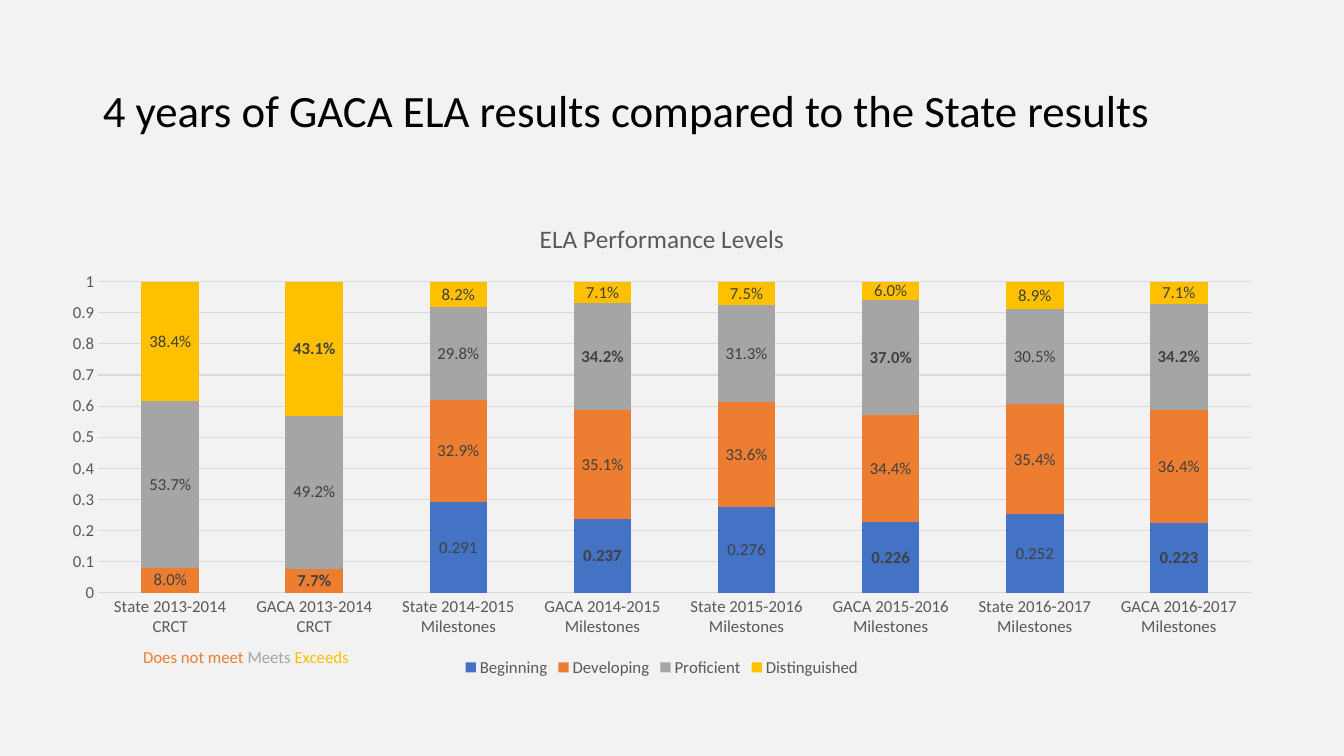
from pptx import Presentation
from pptx.chart.data import CategoryChartData
from pptx.dml.color import RGBColor
from pptx.enum.chart import XL_CHART_TYPE as Chart, XL_LEGEND_POSITION as Legend
from pptx.enum.chart import XL_TICK_MARK as Tick
from pptx.enum.text import MSO_ANCHOR as Anchor, PP_ALIGN as Align
from pptx.util import Inches, Pt

COLORS = {
    "background": "F2F2F2", "title": "000000", "axis": "595959",
    "grid": "D9D9D9", "label": "404040", "Beginning": "4472C4",
    "Developing": "ED7D31", "Proficient": "A5A5A5", "Distinguished": "FFC000",
}
TESTS = [("2013-2014", "CRCT"), ("2014-2015", "Milestones"),
         ("2015-2016", "Milestones"), ("2016-2017", "Milestones")]
LEVELS = {
    "Beginning": (None, None, 0.291, 0.237, 0.276, 0.226, 0.252, 0.223),
    "Developing": (0.08, 0.077, 0.329, 0.351, 0.336, 0.344, 0.354, 0.364),
    "Proficient": (0.537, 0.492, 0.298, 0.342, 0.313, 0.37, 0.305, 0.342),
    "Distinguished": (0.384, 0.431, 0.082, 0.071, 0.075, 0.06, 0.089, 0.071),
}
BOLD_POINTS = {"Beginning": (3, 5, 7), "Developing": (1,),
               "Proficient": (3, 5, 7), "Distinguished": (1,)}
CRCT_KEY = [("Does not meet ", "Developing"), ("Meets ", "Proficient"),
            ("Exceeds", "Distinguished")]


def rgb(name):
    """Return the named colour."""
    return RGBColor.from_string(COLORS[name])


def set_font(font, color, size=12, bold=False):
    """Format a font from a dict of values."""
    values = {"name": "Calibri", "size": Pt(size), "bold": bold}
    for key, value in values.items():
        setattr(font, key, value)
    font.color.rgb = rgb(color)


def set_line(line):
    """Give a chart line the thin grid style."""
    line.color.rgb = rgb("grid")
    line.width = Pt(0.75)


def add_title(s, box):
    """Fill the title placeholder and fit it to the box."""
    sp = s.shapes.title
    for key, value in zip(("left", "top", "width", "height"), box):
        setattr(sp, key, Inches(value))
    tf = sp.text_frame
    tf.vertical_anchor = Anchor.MIDDLE
    p = tf.paragraphs[0]
    p.alignment = Align.LEFT
    p.line_spacing = 0.9
    r = p.add_run()
    r.text = "4 years of GACA ELA results compared to the State results"
    set_font(r.font, "title", 32)


def format_axes(chart):
    """Style both axes and the gridlines."""
    for axis in (chart.category_axis, chart.value_axis):
        axis.major_tick_mark = axis.minor_tick_mark = Tick.NONE
        set_font(axis.tick_labels.font, "axis")
    set_line(chart.category_axis.format.line)
    axis = chart.value_axis
    values = {"minimum_scale": 0, "maximum_scale": 1, "major_unit": 0.1}
    for key, value in values.items():
        setattr(axis, key, value)
    axis.format.line.fill.background()
    set_line(axis.major_gridlines.format.line)
    axis.tick_labels.number_format = "General"
    axis.tick_labels.number_format_is_linked = False


def format_series(series):
    """Colour one level, label its values and embolden the chosen ones."""
    series.format.fill.solid()
    series.format.fill.fore_color.rgb = rgb(series.name)
    is_decimal = series.name == "Beginning"
    labels = series.data_labels
    values = {"show_value": True, "number_format_is_linked": False,
              "number_format": "General" if is_decimal else "0.0%"}
    for key, value in values.items():
        setattr(labels, key, value)
    set_font(labels.font, "label")
    for i in BOLD_POINTS[series.name]:
        value = series.values[i]
        r = series.points[i].data_label.text_frame.paragraphs[0].add_run()
        r.text = f"{value:.3f}" if is_decimal else f"{value:.1%}"
        set_font(r.font, "label", bold=True)


def add_levels_chart(s, box):
    """Place the stacked column chart in the box."""
    data = CategoryChartData()
    data.categories = [f"{group} {year} {test}" for year, test in TESTS
                       for group in ("State", "GACA")]
    for name, values in LEVELS.items():
        data.add_series(name, values)
    chart = s.shapes.add_chart(Chart.COLUMN_STACKED, *map(Inches, box), data).chart
    set_font(chart.font, "title", 10)
    chart.has_title = True
    r = chart.chart_title.text_frame.paragraphs[0].add_run()
    r.text = "ELA Performance Levels"
    set_font(r.font, "axis", 18)
    chart.has_legend = True
    chart.legend.position = Legend.BOTTOM
    chart.legend.include_in_layout = False
    set_font(chart.legend.font, "axis")
    format_axes(chart)
    plot = chart.plots[0]
    plot.gap_width, plot.overlap, plot.vary_by_categories = 150, 100, False
    for series in plot.series:
        format_series(series)


def add_crct_key(s, box):
    """Write the coloured key to the CRCT levels in the box."""
    tf = s.shapes.add_textbox(*map(Inches, box)).text_frame
    tf.word_wrap = True
    for text, color in CRCT_KEY:
        r = tf.paragraphs[0].add_run()
        r.text = text
        set_font(r.font, color)


def main():
    """Build and save the slide."""
    prs = Presentation()
    prs.slide_width, prs.slide_height = Inches(13.33), Inches(7.5)
    s = prs.slides.add_slide(prs.slide_layouts[5])
    s.background.fill.solid()
    s.background.fill.fore_color.rgb = rgb("background")
    add_title(s, (0.92, 0.4, 11.5, 1.45))
    add_levels_chart(s, (0.48, 2, 12.17, 4.76))
    add_crct_key(s, (1.32, 6.37, 2.31, 0.3))
    prs.save("out.pptx")


if __name__ == "__main__":
    main()
